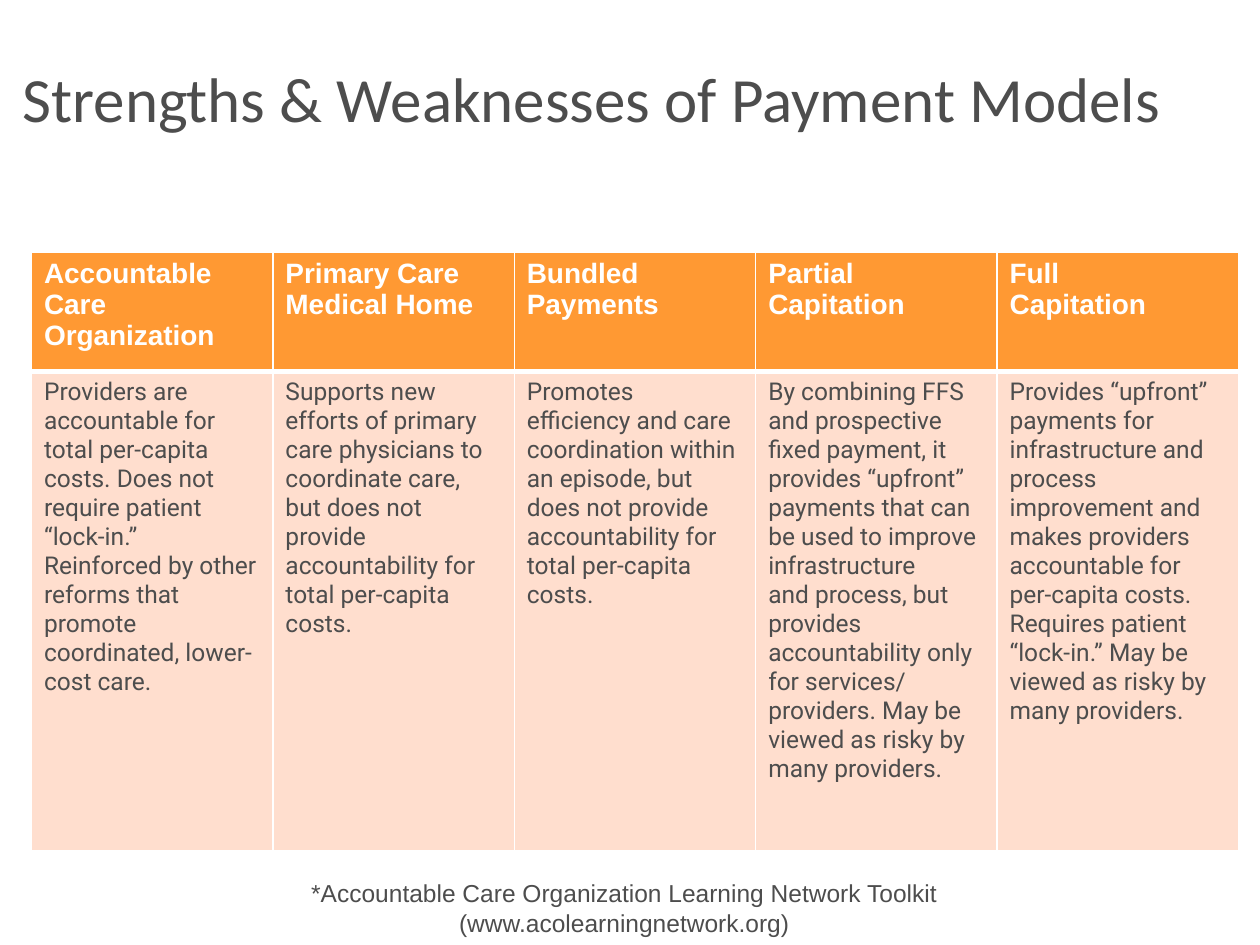
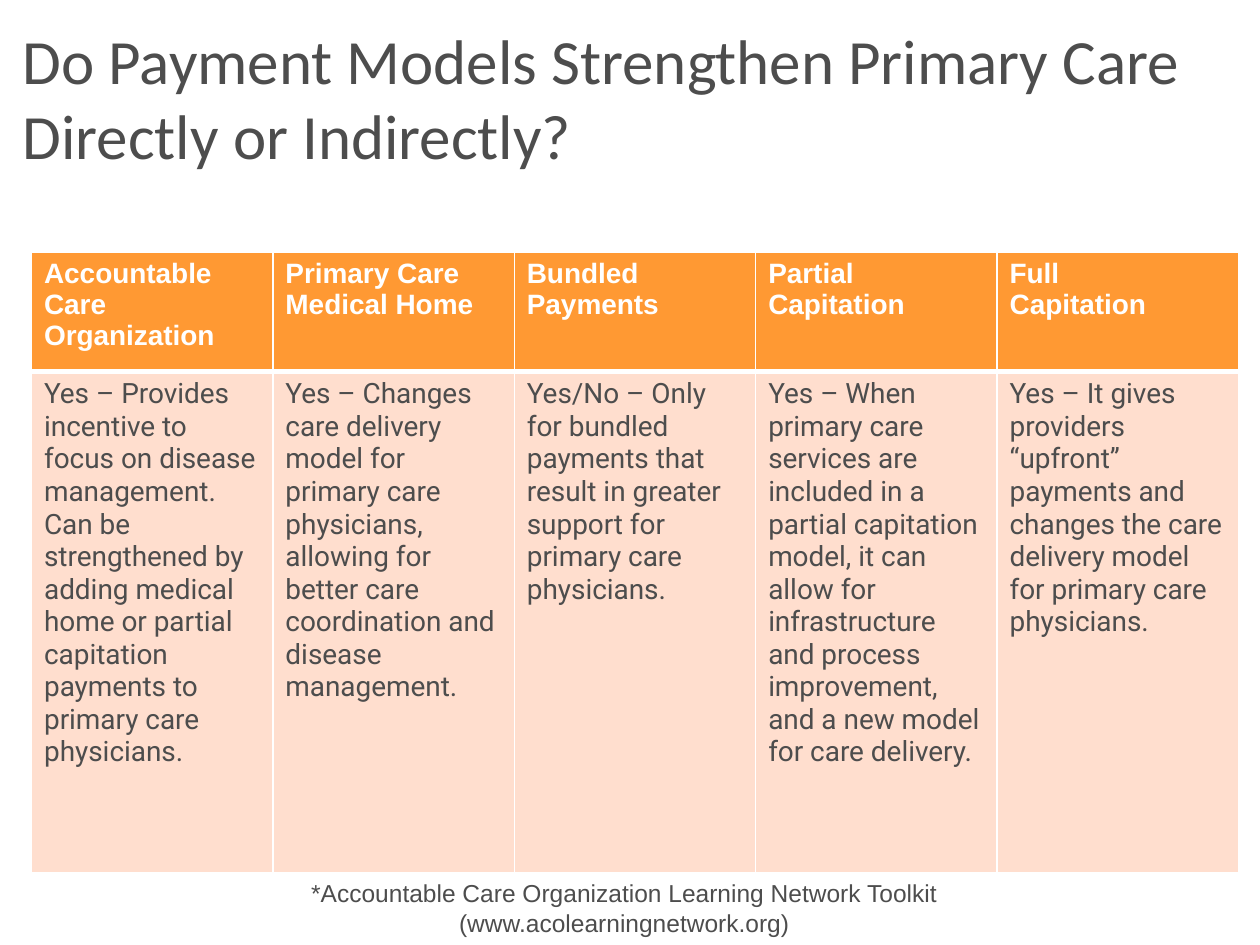
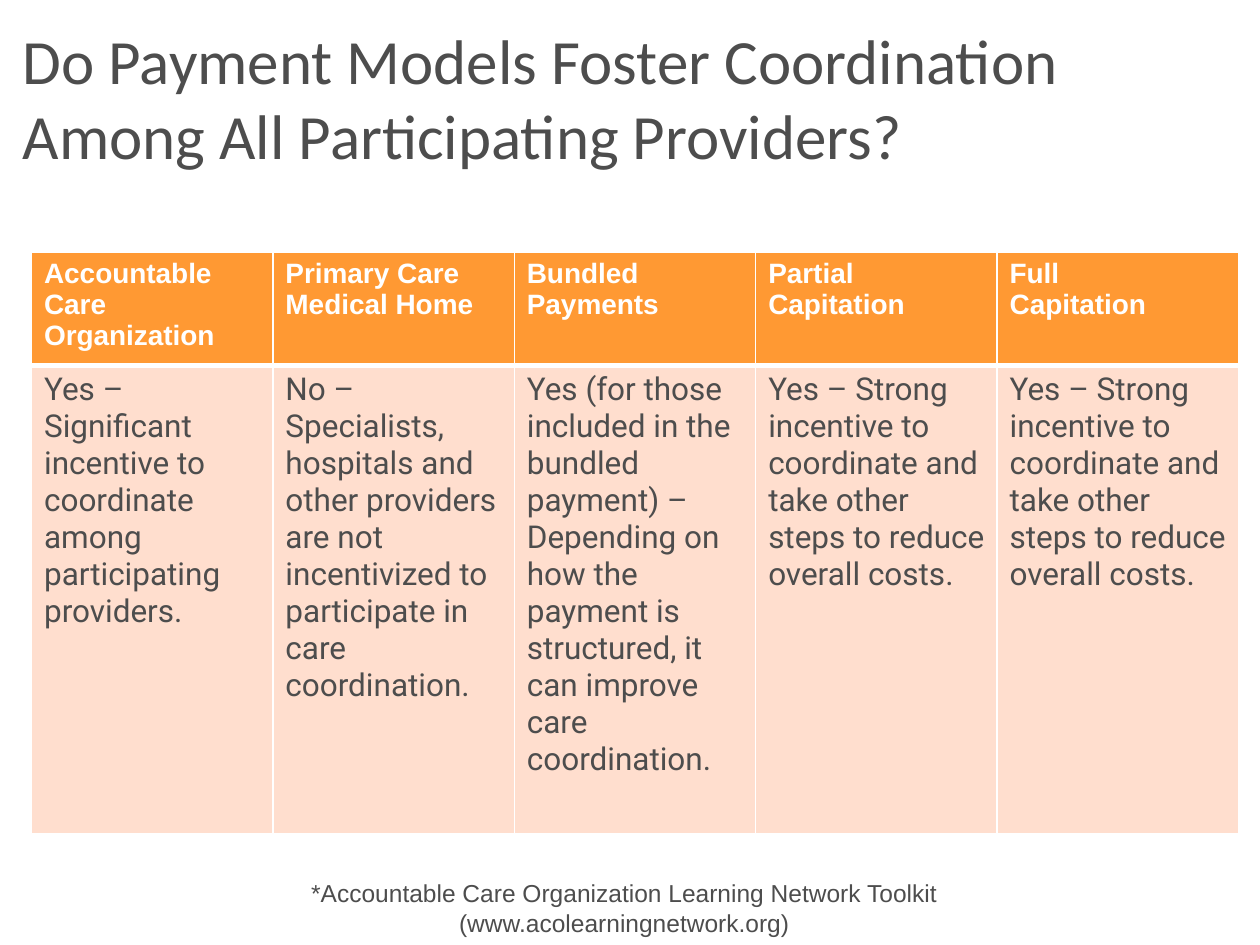
import pptx
import pptx.util
import pptx.dml.color
import pptx.enum.text
import lxml.etree
from pptx.util import Inches

COLORS = {"text": "4D4D4D", "header": "FF9933", "body": "FFDECE", "white": "FFFFFF"}

MODELS = [
    "Accountable Care Organization",
    "Primary Care Medical Home",
    "Bundled Payments",
    "Partial\nCapitation",
    "Full\nCapitation",
]
SOURCE = "*Accountable Care Organization Learning Network Toolkit (www.acolearningnetwork.org)"

SLIDES = [
    {
        "title": "Strengths & Weaknesses of Payment Models",
        "size": 14,
        "heights": (0.95, 3.8),
        "answers": [
            "Providers are accountable for total per-capita costs. Does not require patient “lock-in.” "
            "Reinforced by other reforms that promote coordinated, lower-cost care.",
            "Supports new efforts of primary care physicians to coordinate care, but does not provide "
            "accountability for total per-capita costs.",
            "Promotes efficiency and care coordination within an episode, but does not provide "
            "accountability for total per-capita costs.",
            "By combining FFS and prospective fixed payment, it provides “upfront” payments that can be "
            "used to improve infrastructure\nand process, but provides accountability only for services/\n"
            "providers. May be viewed as risky by many providers.",
            "Provides “upfront” payments for infrastructure and process improvement and makes providers "
            "accountable for per-capita costs. Requires patient “lock-in.” May be viewed as risky by "
            "many providers.",
        ],
    },
    {
        "title": "Do Payment Models Strengthen Primary Care Directly or Indirectly?",
        "size": 16,
        "heights": (0.95, 3.98),
        "answers": [
            "Yes – Provides incentive to focus on disease management. Can be strengthened by adding "
            "medical home or partial capitation payments to primary care physicians.",
            "Yes – Changes care delivery model for primary care physicians, allowing for better care "
            "coordination and disease management.",
            "Yes/No – Only for bundled payments that result in greater support for primary care physicians.",
            "Yes – When primary care services are included in a partial capitation model, it can allow "
            "for infrastructure and process improvement, and a new model for care delivery.",
            "Yes – It gives providers “upfront” payments and changes the care delivery model for primary "
            "care physicians.",
        ],
    },
    {
        "title": "Do Payment Models Foster Coordination Among All Participating Providers?",
        "size": 18,
        "heights": (0.9, 3.72),
        "answers": [
            "Yes – Significant incentive to coordinate among participating providers.",
            "No – Specialists, hospitals and other providers are not incentivized to participate in care "
            "coordination.",
            "Yes (for those included in the bundled payment) – Depending on how the payment is "
            "structured, it can improve care coordination.",
            "Yes – Strong incentive to coordinate and take other steps to reduce overall costs.",
            "Yes – Strong incentive to coordinate and take other steps to reduce overall costs.",
        ],
    },
]

TITLE_BOX = (0.08, 0.38, 9.67, 0.78)
SOURCE_BOX = (1.33, 6.92, 7.25, 0.57)
TABLE_LEFT, TABLE_TOP, TABLE_WIDTH = 0.25, 2, 9.58

TITLE = {"name": "Calibri", "size": 36, "color": "text", "bold": False}
HEADER = {"name": "Arial", "size": 16, "color": "white", "bold": True}
BODY = {"name": "Roboto", "color": "text", "bold": False}
FOOTER = {"name": "Arial", "size": 14, "color": "text", "bold": False}


def rgb(key):
    return pptx.dml.color.RGBColor.from_string(COLORS[key])


def write(tf, text, style, align="LEFT"):
    tf.text = text
    tf.word_wrap = True
    for p in tf.paragraphs:
        p.alignment = getattr(pptx.enum.text.PP_ALIGN, align)
        for r in p.runs:
            values = {**style, "size": pptx.util.Pt(style["size"])}
            r.font.color.rgb = rgb(values.pop("color"))
            for name, value in values.items():
                setattr(r.font, name, value)


def set_borders(cell, widths):
    tcPr = cell._tc.get_or_add_tcPr()
    for i, (side, width) in enumerate(widths.items()):
        ln = pptx.oxml.parse_xml(
            f'<a:ln{side} xmlns:a="http://schemas.openxmlformats.org/drawingml/2006/main" '
            f'w="{pptx.util.Pt(width)}"><a:solidFill><a:srgbClr val="{COLORS["white"]}"/>'
            f'</a:solidFill></a:ln{side}>'
        )
        tcPr.insert(i, ln)


def add_models_table(s, answers, size, heights):
    box = (TABLE_LEFT, TABLE_TOP, TABLE_WIDTH, sum(heights))
    table = s.shapes.add_table(2, len(MODELS), *map(Inches, box)).table
    table.horz_banding = False
    for col in table.columns:
        col.width = Inches(TABLE_WIDTH / len(MODELS))
    rows = [
        (MODELS, HEADER, "header", {"L": 1, "R": 1, "T": 1, "B": 3}),
        (answers, {**BODY, "size": size}, "body", {"L": 1, "R": 1, "T": 3, "B": 1}),
    ]
    for i, (texts, style, fill, borders) in enumerate(rows):
        table.rows[i].height = Inches(heights[i])
        for j, text in enumerate(texts):
            cell = table.cell(i, j)
            write(cell.text_frame, text, style)
            cell.fill.solid()
            cell.fill.fore_color.rgb = rgb(fill)
            set_borders(cell, borders)


def add_slide(prs, content):
    s = prs.slides.add_slide(prs.slide_layouts[5])
    title = s.shapes.title
    for name, value in zip(("left", "top", "width", "height"), TITLE_BOX):
        setattr(title, name, Inches(value))
    write(title.text_frame, content["title"], TITLE)
    title.text_frame.auto_size = pptx.enum.text.MSO_AUTO_SIZE.NONE
    title.text_frame.vertical_anchor = pptx.enum.text.MSO_ANCHOR.MIDDLE
    add_models_table(s, content["answers"], content["size"], content["heights"])
    source = s.shapes.add_textbox(*map(Inches, SOURCE_BOX))
    write(source.text_frame, SOURCE, FOOTER, "CENTER")


def main():
    prs = pptx.Presentation()
    prs.slide_width, prs.slide_height = Inches(10), Inches(7.5)
    for content in SLIDES:
        add_slide(prs, content)
    prs.save("out.pptx")


if __name__ == "__main__":
    main()
